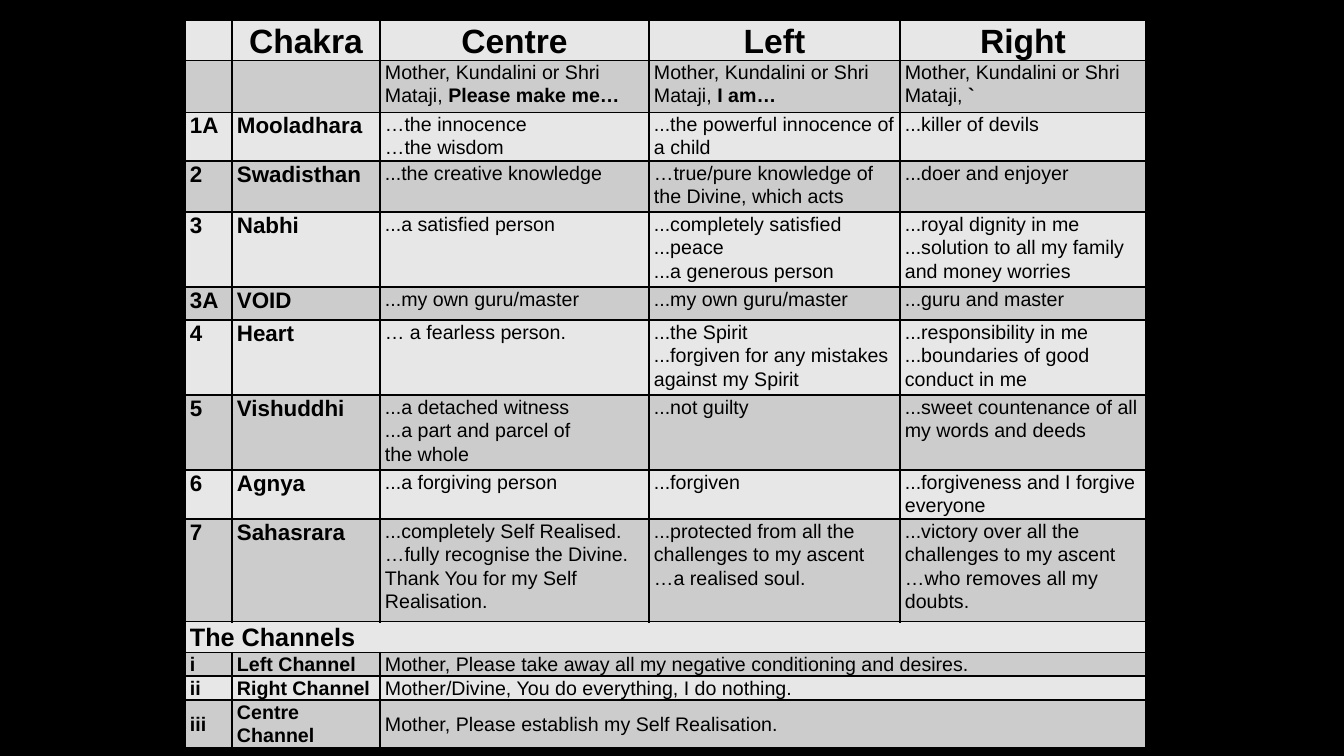
"""Build a one-slide table of chakra affirmations and channels."""
from lxml.etree import SubElement
from pptx import Presentation
from pptx.dml.color import RGBColor
from pptx.enum.text import MSO_ANCHOR as Anchor, PP_ALIGN as Align
from pptx.oxml.ns import qn
from pptx.util import Pt

PX = 12192000 / 1344
BLACK, LIGHT, DARK = "000000", "E7E7E7", "CCCCCC"
LEFT, TOP = 185, 20
COLUMN_WIDTHS = [47, 148, 269, 251, 246]
ROW_HEIGHTS = [40, 52, 49, 51, 75, 33, 75, 75, 49, 103, 30, 24, 24, 46]

HEADER = ["", "Chakra", "Centre", "Left", "Right"]
CHAKRAS = [
    ["", "", "Mother, Kundalini or Shri Mataji, *Please make me…*",
     "Mother, Kundalini or Shri Mataji, *I am…*",
     "Mother, Kundalini or Shri Mataji, *`*"],
    ["1A", "Mooladhara", "…the innocence\n…the wisdom",
     "...the powerful innocence of a child", "...killer of devils"],
    ["2", "Swadisthan", "...the creative knowledge",
     "…true/pure knowledge of the Divine, which acts", "...doer and enjoyer"],
    ["3", "Nabhi", "...a satisfied person",
     "...completely satisfied\n...peace\n...a generous person",
     "...royal dignity in me\n...solution to all my family and money worries"],
    ["3A", "VOID", "...my own guru/master", "...my own guru/master", "...guru and master"],
    ["4", "Heart", "… a fearless person.",
     "...the Spirit\n...forgiven for any mistakes against my Spirit",
     "...responsibility in me\n...boundaries of good conduct in me"],
    ["5", "Vishuddhi", "...a detached witness\n...a part and parcel of\nthe whole",
     "...not guilty", "...sweet countenance of all my words and deeds"],
    ["6", "Agnya", "...a forgiving person", "...forgiven",
     "...forgiveness and I forgive everyone"],
    ["7", "Sahasrara",
     "...completely Self Realised.\n…fully recognise the Divine.\n"
     "Thank You for my Self Realisation.",
     "...protected from all the challenges to my ascent\n…a realised soul.",
     "...victory over all the challenges to my ascent\n…who removes all my doubts."],
]
CHANNELS_TITLE = ["The Channels"]
CHANNELS = [
    ["i", "Left Channel", "Mother, Please take away all my negative conditioning and desires."],
    ["ii", "Right Channel", "Mother/Divine, You do everything, I do nothing."],
    ["iii", "Centre Channel", "Mother, Please establish my Self Realisation."],
]


def px(length):
    return round(length * PX)


def color(value):
    return RGBColor.from_string(value)


def write(cell, text, size=14, bold=False, align=Align.LEFT, anchor=Anchor.TOP):
    cell.vertical_anchor = anchor
    frame = cell.text_frame
    for index, line in enumerate(text.split("\n")):
        para = frame.add_paragraph() if index else frame.paragraphs[0]
        para.alignment = align
        para.line_spacing = 1.07
        for part, words in enumerate(line.split("*")):
            if words:
                span = para.add_run()
                span.text = words
                span.font.name = "Arial"
                span.font.size = Pt(size)
                span.font.bold = bold or part % 2 == 1
                span.font.color.rgb = color(BLACK)


def style(cell, fill):
    cell.margin_left = cell.margin_right = px(5)
    cell.margin_top = cell.margin_bottom = 0
    cell.fill.solid()
    cell.fill.fore_color.rgb = color(fill)
    properties = cell._tc.get_or_add_tcPr()
    for index, side in enumerate(["lnL", "lnR", "lnT", "lnB"]):
        border = SubElement(properties, qn("a:" + side), w=str(Pt(1)))
        solid = SubElement(border, qn("a:solidFill"))
        SubElement(solid, qn("a:srgbClr"), val=BLACK)
        properties.insert(index, border)


def row_formats():
    yield HEADER, [dict(size=24, bold=True, align=Align.CENTER, anchor=Anchor.MIDDLE)] * 5
    for row in CHAKRAS:
        yield row, [dict(size=16, bold=True)] * 2 + [dict(size=14)] * 3
    yield CHANNELS_TITLE, [dict(size=18, bold=True, anchor=Anchor.MIDDLE)]
    for row in CHANNELS:
        yield row, [dict(bold=column < 2, anchor=Anchor.MIDDLE) for column in range(3)]


def main():
    deck = Presentation()
    deck.slide_width, deck.slide_height = px(1344), px(756)
    page = deck.slides.add_slide(deck.slide_layouts[6])
    page.background.fill.solid()
    page.background.fill.fore_color.rgb = color(BLACK)

    table = page.shapes.add_table(
        len(ROW_HEIGHTS), len(COLUMN_WIDTHS), px(LEFT), px(TOP),
        px(sum(COLUMN_WIDTHS)), px(sum(ROW_HEIGHTS))).table
    table.first_row = table.horz_banding = False
    for column, width in zip(table.columns, COLUMN_WIDTHS):
        column.width = px(width)
    for row, height in zip(table.rows, ROW_HEIGHTS):
        row.height = px(height)

    last = len(COLUMN_WIDTHS) - 1
    for index, (texts, formats) in enumerate(row_formats()):
        for cell in table.rows[index].cells:
            style(cell, DARK if index % 2 else LIGHT)
        if len(texts) <= last:
            table.cell(index, len(texts) - 1).merge(table.cell(index, last))
        for column, (text, options) in enumerate(zip(texts, formats)):
            write(table.cell(index, column), text, **options)

    deck.save("out.pptx")


if __name__ == "__main__":
    main()
